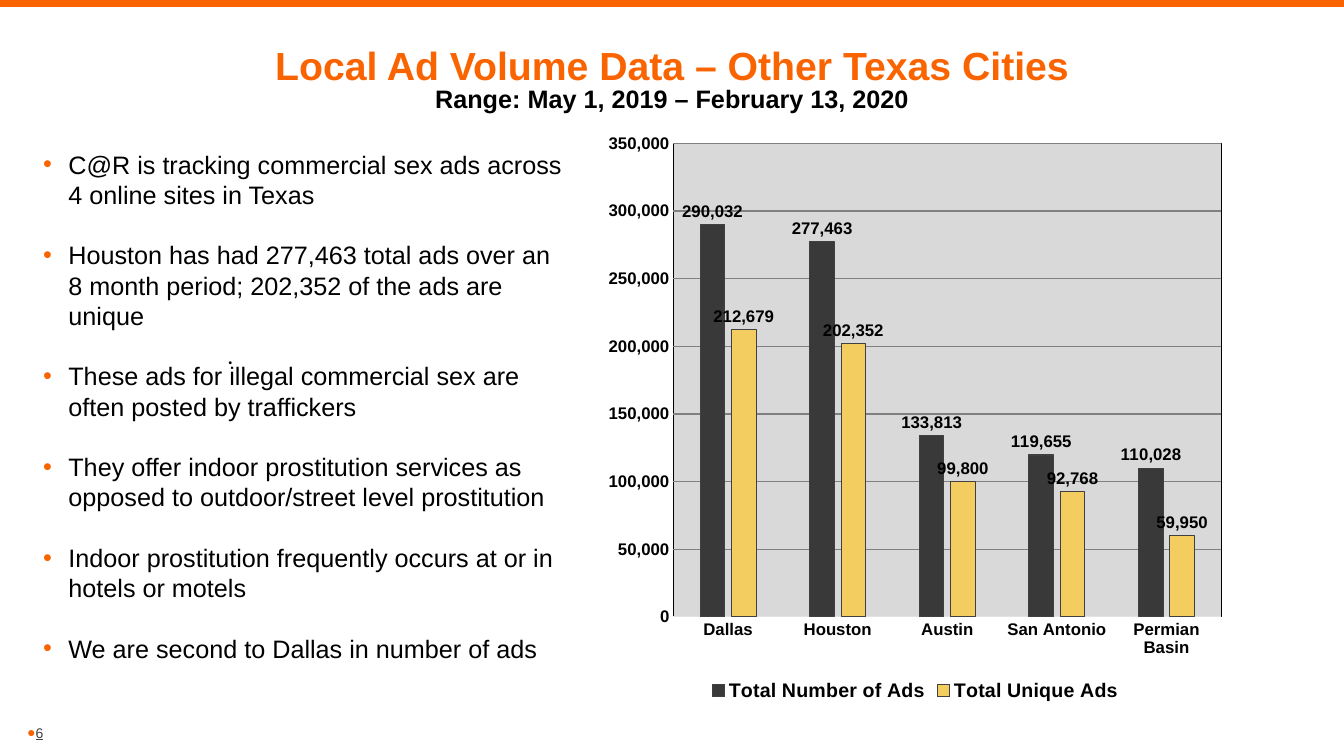
from lxml import etree
from pptx import Presentation
from pptx.chart.data import CategoryChartData
from pptx.dml.color import RGBColor
from pptx.enum.chart import XL_CHART_TYPE, XL_LABEL_POSITION, XL_LEGEND_POSITION, XL_TICK_MARK
from pptx.enum.shapes import MSO_CONNECTOR
from pptx.enum.text import MSO_ANCHOR, PP_ALIGN
from pptx.oxml import parse_xml
from pptx.oxml.ns import nsdecls, qn
from pptx.util import Inches, Pt

COLORS = {
    "orange": "FA6400", "black": "000000", "gray": "404040", "plot": "D9D9D9",
    "grid": "808080", "axis": "E2E2E2", "total": "393939", "unique": "F3CD60",
}
BULLETS = [
    "C@R is tracking commercial sex ads across 4 online sites in Texas",
    "Houston has had 277,463 total ads over an 8 month period; 202,352 of the ads are unique",
    "These ads for illegal commercial sex are often posted by traffickers",
    "They offer indoor prostitution services as opposed to outdoor/street level prostitution",
    "Indoor prostitution frequently occurs at or in hotels or motels",
    "We are second to Dallas in number of ads",
]
CITIES = ["Dallas", "Houston", "Austin", "San Antonio", "Permian Basin"]
SERIES = [
    ("Total Number of Ads", [290032, 277463, 133813, 119655, 110028], "total"),
    ("Total Unique Ads", [212679, 202352, 99800, 92768, 59950], "unique"),
]


def rgb(name):
    return RGBColor.from_string(COLORS[name])


def format_font(font, size, color="black", bold=False, name="Arial", underline=None):
    font.size, font.bold, font.name = Pt(size), bold, name
    font.color.rgb = rgb(color)
    if underline:
        font.underline = True


def add_run(paragraph, text, **font_format):
    run = paragraph.add_run()
    run.text = text
    format_font(run.font, **font_format)


def add_frame(slide, box, inset=True, anchor=MSO_ANCHOR.TOP):
    """Add a wrapping text box and return its text frame."""
    frame = slide.shapes.add_textbox(*map(Inches, box)).text_frame
    frame.word_wrap = True
    frame.vertical_anchor = anchor
    if not inset:
        frame.margin_left = frame.margin_right = frame.margin_top = frame.margin_bottom = 0
    return frame


def add_bullet(paragraph, character, indent=0):
    properties = paragraph._p.get_or_add_pPr()
    properties.set("marL", str(Inches(indent)))
    properties.set("indent", str(-Inches(indent)))
    color = etree.SubElement(properties, qn("a:buClr"))
    etree.SubElement(color, qn("a:srgbClr"), val=COLORS["orange"])
    etree.SubElement(properties, qn("a:buFont"), typeface="Arial")
    etree.SubElement(properties, qn("a:buChar"), char=character)


def add_top_rule(slide, width, top):
    rule = slide.shapes.add_connector(
        MSO_CONNECTOR.STRAIGHT, 0, Inches(top), Inches(width), Inches(top))
    rule.line.color.rgb = rgb("orange")
    rule.line.width = Pt(5)
    etree.SubElement(rule._element.spPr, qn("a:effectLst"))


def add_title(slide, box):
    paragraph = add_frame(slide, box, inset=False, anchor=MSO_ANCHOR.BOTTOM).paragraphs[0]
    paragraph.alignment = PP_ALIGN.CENTER
    paragraph.line_spacing = 0.85
    add_run(paragraph, "Local Ad Volume Data – Other Texas Cities", size=28, color="orange", bold=True)
    paragraph.add_line_break()
    add_run(paragraph, "Range: May 1, 2019 – February 13, 2020", size=18, bold=True)


def add_page_number(slide, box):
    paragraph = add_frame(slide, box, inset=False, anchor=MSO_ANCHOR.BOTTOM).paragraphs[0]
    add_bullet(paragraph, "●")
    add_run(paragraph, "6", size=10, color="gray", underline=True)


def add_dot(slide, box):
    paragraph = add_frame(slide, box).paragraphs[0]
    paragraph.alignment = PP_ALIGN.CENTER
    paragraph.line_spacing = Pt(25.2)
    add_run(paragraph, ".", size=17, name="Calibri")


def add_bullet_list(slide, box):
    frame = add_frame(slide, box)
    for index, text in enumerate(BULLETS):
        paragraph = frame.add_paragraph() if index else frame.paragraphs[0]
        paragraph.line_spacing = Pt(21.6)
        if index:
            paragraph.space_before = Pt(21.6)
        add_bullet(paragraph, "•", indent=0.25)
        add_run(paragraph, text, size=18)


def format_plot_area(chart):
    """Place the plot inside the chart and give it a fill and a border."""
    plot_area = chart._chartSpace.chart.plotArea
    for layout in plot_area.findall(qn("c:layout")):
        plot_area.remove(layout)
    places = "".join(f'<c:{key} val="{value}"/>' for key, value in
                     [("x", 0.12), ("y", 0.035), ("w", 0.86), ("h", 0.813)])
    plot_area.insert(0, parse_xml(
        f'<c:layout {nsdecls("c")}><c:manualLayout><c:layoutTarget val="inner"/>'
        f'<c:xMode val="edge"/><c:yMode val="edge"/>{places}</c:manualLayout></c:layout>'))
    fill, border = (f'<a:solidFill><a:srgbClr val="{COLORS[name]}"/></a:solidFill>'
                    for name in ("plot", "black"))
    plot_area.append(parse_xml(
        f'<c:spPr {nsdecls("c", "a")}>{fill}<a:ln w="9525">{border}</a:ln></c:spPr>'))


def format_axes(chart):
    for axis in (chart.category_axis, chart.value_axis):
        axis.major_tick_mark = axis.minor_tick_mark = XL_TICK_MARK.NONE
        format_font(axis.tick_labels.font, 12, bold=True)
    category_line = chart.category_axis.format.line
    category_line.color.rgb = rgb("axis")
    category_line.width = Pt(0.75)
    value_axis = chart.value_axis
    value_axis.minimum_scale, value_axis.maximum_scale, value_axis.major_unit = 0, 350000, 50000
    value_axis.format.line.fill.background()
    value_axis.tick_labels.number_format = "#,##0"
    value_axis.tick_labels.number_format_is_linked = False
    value_axis.major_gridlines.format.line.color.rgb = rgb("grid")
    value_axis.major_gridlines.format.line.width = Pt(0.75)


def format_series(series, color):
    series.format.fill.solid()
    series.format.fill.fore_color.rgb = rgb(color)
    series.format.line.color.rgb = rgb("gray")
    series.format.line.width = Pt(0.75)
    labels = series.data_labels
    labels.show_value = True
    labels.position = XL_LABEL_POSITION.OUTSIDE_END
    labels.number_format, labels.number_format_is_linked = "#,##0", False
    format_font(labels.font, 12, bold=True)


def add_ads_chart(slide, box):
    data = CategoryChartData(number_format="#,##0")
    data.categories = CITIES
    for name, values, _ in SERIES:
        data.add_series(name, values)
    chart = slide.shapes.add_chart(
        XL_CHART_TYPE.COLUMN_CLUSTERED, *map(Inches, box), data).chart
    format_font(chart.font, 10, "gray")
    chart.has_title = False
    chart.has_legend = True
    chart.legend.position = XL_LEGEND_POSITION.BOTTOM
    chart.legend.include_in_layout = False
    format_font(chart.legend.font, 14, bold=True)
    plot = chart.plots[0]
    plot.gap_width, plot.overlap, plot.vary_by_categories = 219, -27, False
    for series, (_, _, color) in zip(plot.series, SERIES):
        format_series(series, color)
    format_axes(chart)
    format_plot_area(chart)


def main():
    presentation = Presentation()
    presentation.slide_width, presentation.slide_height = Inches(13.33), Inches(7.5)
    slide = presentation.slides.add_slide(presentation.slide_layouts[6])
    add_top_rule(slide, width=13.33, top=0.03)
    add_title(slide, (0.5, 0.47, 12.33, 0.66))
    add_page_number(slide, (0.27, 7.17, 0.3, 0.18))
    add_dot(slide, (0.5, 3.26, 3.57, 0.43))
    add_bullet_list(slide, (0.33, 1.43, 5.39, 6.46))
    add_ads_chart(slide, (5.92, 1.22, 6.32, 5.78))
    presentation.save("out.pptx")


if __name__ == "__main__":
    main()
